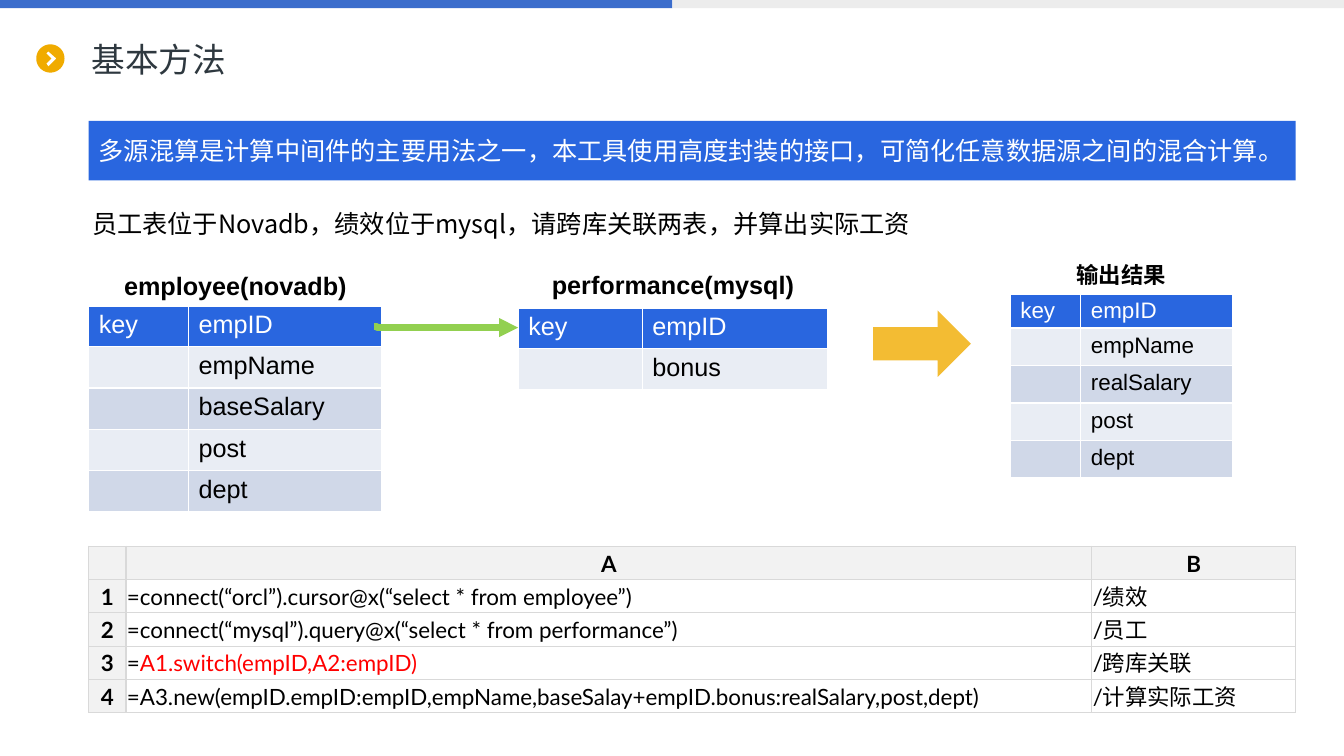
from dataclasses import dataclass
from math import cos, pi, sin

from lxml.etree import SubElement
from pptx import Presentation
from pptx.dml.color import RGBColor
from pptx.enum.shapes import MSO_CONNECTOR, MSO_SHAPE
from pptx.enum.text import MSO_ANCHOR, PP_ALIGN
from pptx.oxml.ns import qn
from pptx.util import Inches, Pt

BLUE = RGBColor(0x29, 0x66, 0xDF)
BAR_BLUE = RGBColor(0x3B, 0x6D, 0xCC)
BAR_GRAY = RGBColor(0xEC, 0xEC, 0xEC)
GOLD = RGBColor(0xF0, 0xAB, 0x00)
AMBER = RGBColor(0xF3, 0xBC, 0x33)
GREEN = RGBColor(0x92, 0xD0, 0x50)
RED = RGBColor(0xFF, 0x00, 0x00)
WHITE = RGBColor(0xFF, 0xFF, 0xFF)
BLACK = RGBColor(0x00, 0x00, 0x00)
SLATE = RGBColor(0x2E, 0x38, 0x3F)
BANDS = (RGBColor(0xE9, 0xED, 0xF4), RGBColor(0xD0, 0xD8, 0xE8))
HEAD_GRAY = RGBColor(0xF2, 0xF2, 0xF2)
GRID_GRAY = RGBColor(0xD9, 0xD9, 0xD9)
SANS = "Noto Sans CJK SC"


@dataclass
class Block:
    left: float
    top: float
    width: float
    height: float
    fill: RGBColor | None
    kind: MSO_SHAPE = MSO_SHAPE.RECTANGLE
    text: str = ""
    font: str = SANS
    color: RGBColor = BLACK
    rounding: float | None = None


@dataclass
class Entity:
    title: str
    fields: list[str]
    left: float
    top: float
    cols: list[float]
    rows: list[float]
    size: int = 18


BLOCKS = [
    Block(0, 0, 6.67, 0.08, BAR_BLUE),
    Block(6.67, 0, 6.67, 0.08, BAR_GRAY),
    Block(0.88, 1.2, 11.97, 0.59, BLUE, MSO_SHAPE.ROUNDED_RECTANGLE,
          "多源混算是计算中间件的主要用法之一，本工具使用高度封装的接口，可简化任意数据源之间的混合计算。",
          "Courier New", WHITE, 0),
    Block(0.78, 1.86, 9.59, 0.71, None, MSO_SHAPE.ROUNDED_RECTANGLE,
          "员工表位于Novadb，绩效位于mysql，请跨库关联两表，并算出实际工资"),
    Block(8.66, 3.08, 0.97, 0.66, AMBER, MSO_SHAPE.RIGHT_ARROW),
]
ENTITIES = [
    Entity("employee(novadb)", ["empID", "empName", "baseSalary", "post", "dept"],
           0.88, 2.65, [0.99, 1.92], [0.33] + [0.41] * 5),
    Entity("performance(mysql)", ["empID", "bonus"],
           5.14, 2.64, [1.23, 1.84], [0.41] * 3),
    Entity("输出结果", ["empID", "empName", "realSalary", "post", "dept"],
           10.02, 2.56, [0.7, 1.5], [0.3] * 6, 16),
]
CODE = [
    ("=connect(“orcl”).cursor@x(“select * from employee”)", "/绩效"),
    ("=connect(“mysql”).query@x(“select * from performance”)", "/员工"),
    ("=A1.switch(empID,A2:empID)", "/跨库关联"),
    ("=A3.new(empID.empID:empID,empName,baseSalay+empID.bonus:realSalary,post,dept)",
     "/计算实际工资"),
]


def add_run(p, text: str, name: str, size: float, color: RGBColor, bold: bool = False) -> None:
    r = p.add_run()
    r.text = text
    for key, value in {"name": name, "size": Pt(size), "bold": bold}.items():
        setattr(r.font, key, value)
    r.font.color.rgb = color
    SubElement(r.font._element, qn("a:ea"), typeface=name)


def paint(s, fill: RGBColor | None) -> None:
    s.shadow.inherit = False
    s.line.fill.background()
    if fill is None:
        s.fill.background()
    else:
        s.fill.solid()
        s.fill.fore_color.rgb = fill


def add_block(shapes, b: Block) -> None:
    s = shapes.add_shape(b.kind, *map(Inches, (b.left, b.top, b.width, b.height)))
    paint(s, b.fill)
    if b.rounding is not None:
        s.adjustments[0] = b.rounding
    if b.text:
        s.text_frame.vertical_anchor = MSO_ANCHOR.MIDDLE
        p = s.text_frame.paragraphs[0]
        p.alignment = PP_ALIGN.LEFT
        add_run(p, b.text, b.font, 18, b.color)


def add_bullet_icon(shapes) -> None:
    ring = [(0.5 + 0.14 * cos(i * pi / 30), 0.58 + 0.14 * sin(i * pi / 30)) for i in range(60)]
    chevron = [(0.46, 0.53), (0.48, 0.51), (0.56, 0.58), (0.48, 0.66), (0.46, 0.63), (0.51, 0.58)]
    outer, inner = ([(Inches(x), Inches(y)) for x, y in pts] for pts in (ring, chevron))
    builder = shapes.build_freeform(*outer[0])
    builder.add_line_segments(outer[1:])
    builder.move_to(*inner[0])
    builder.add_line_segments(inner[1:])
    paint(builder.convert_to_shape(), GOLD)


def add_grid(shapes, left: float, top: float, cols: list[float], rows: list[float]):
    frame = shapes.add_table(len(rows), len(cols), *map(Inches, (left, top, sum(cols), sum(rows))))
    table = frame.table
    table.first_row = table.horz_banding = False
    for col, width in zip(table.columns, cols):
        col.width = Inches(width)
    for row, height in zip(table.rows, rows):
        row.height = Inches(height)
    return table


def style_cell(cell, fill: RGBColor | None, border: RGBColor, size: float, bottom: float = 1) -> None:
    tc_pr = cell._tc.get_or_add_tcPr()
    for side in "LRTB":
        width = bottom if side == "B" else 1
        ln = SubElement(tc_pr, qn(f"a:ln{side}"), w=str(Pt(width)))
        SubElement(SubElement(ln, qn("a:solidFill")), qn("a:srgbClr"), val=str(border))
    if fill is None:
        cell.fill.background()
    else:
        cell.fill.solid()
        cell.fill.fore_color.rgb = fill
    if not cell.text:
        SubElement(cell.text_frame.paragraphs[0]._p, qn("a:endParaRPr"), sz=str(size * 100))


def add_entity(shapes, e: Entity) -> None:
    table = add_grid(shapes, e.left, e.top, e.cols, e.rows)
    title = table.cell(0, 0)
    title.merge(table.cell(0, 1))
    p = title.text_frame.paragraphs[0]
    p.alignment = PP_ALIGN.CENTER
    add_run(p, e.title, "Arial", e.size, BLACK, True)
    for c in range(2):
        style_cell(table.cell(0, c), None, WHITE, e.size, 3)
    for i, field in enumerate(e.fields):
        fill, color = (BANDS[(i - 1) % 2], BLACK) if i else (BLUE, WHITE)
        for c, text in enumerate(("" if i else "key", field)):
            cell = table.cell(i + 1, c)
            if text:
                add_run(cell.text_frame.paragraphs[0], text, "Arial", e.size, color)
            style_cell(cell, fill, WHITE, e.size)


def add_code(shapes) -> None:
    grid = [("", "A", "B")] + [(str(i), *line) for i, line in enumerate(CODE, 1)]
    table = add_grid(shapes, 0.88, 5.42, [0.37, 9.58, 2.02], [0.33] * len(grid))
    for r, line in enumerate(grid):
        for c, text in enumerate(line):
            cell, head = table.cell(r, c), r == 0 or c == 0
            margins = dict.fromkeys(("margin_left", "margin_right", "margin_top"), Inches(0.01))
            formats = margins | {"margin_bottom": 0, "vertical_anchor": MSO_ANCHOR.MIDDLE}
            for key, value in formats.items():
                setattr(cell, key, value)
            p = cell.text_frame.paragraphs[0]
            p.alignment = PP_ALIGN.CENTER if head else PP_ALIGN.LEFT
            parts = [(text, BLACK)] if text else []
            if (r, c) == (3, 1):
                parts = [(text[:1], BLACK), (text[1:], RED)]
            for part, color in parts:
                add_run(p, part, "Lato", 16, color, head)
            style_cell(cell, HEAD_GRAY if head else WHITE, GRID_GRAY, 16)


def add_link(shapes) -> None:
    s = shapes.add_connector(MSO_CONNECTOR.ELBOW, *map(Inches, (3.71, 3.24, 5.14, 3.25)))
    s.line.color.rgb = GREEN
    s.line.width = Pt(4.5)
    SubElement(s.line._get_or_add_ln(), qn("a:tailEnd"), type="triangle")
    sp_pr = s._element.spPr
    SubElement(sp_pr, qn("a:effectLst"))
    SubElement(sp_pr.find(f".//{qn('a:avLst')}"), qn("a:gd"), name="adj1", fmla="val 2100")


def add_title(s) -> None:
    sp = s.shapes.title
    box = {"left": 0.78, "top": 0.29, "width": 5.89, "height": 0.59}
    for key, value in box.items():
        setattr(sp, key, Inches(value))
    tf = sp.text_frame
    margins = {"margin_left": 0.13, "margin_right": 0.13, "margin_top": 0.07, "margin_bottom": 0.07}
    for key, value in margins.items():
        setattr(tf, key, Inches(value))
    tf.vertical_anchor = MSO_ANCHOR.MIDDLE
    p = tf.paragraphs[0]
    p.alignment = PP_ALIGN.LEFT
    add_run(p, "基本方法", SANS, 24, SLATE)


def main() -> None:
    prs = Presentation()
    prs.slide_width, prs.slide_height = Inches(13.33), Inches(7.5)
    s = prs.slides.add_slide(prs.slide_layouts[5])
    add_title(s)
    for block in BLOCKS:
        add_block(s.shapes, block)
    add_bullet_icon(s.shapes)
    for entity in ENTITIES:
        add_entity(s.shapes, entity)
    add_link(s.shapes)
    add_code(s.shapes)
    prs.save("out.pptx")


if __name__ == "__main__":
    main()
